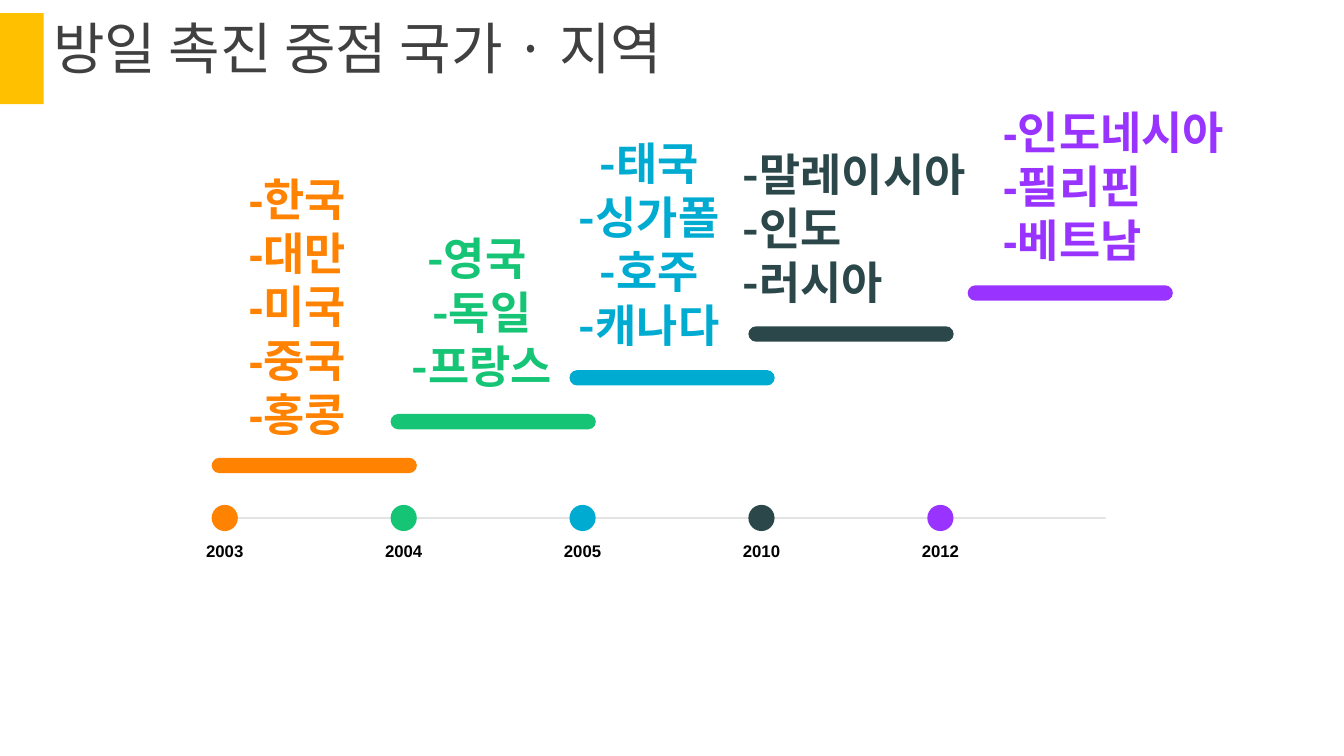
from pptx import Presentation
from pptx.dml.color import RGBColor
from pptx.enum.shapes import MSO_CONNECTOR, MSO_SHAPE
from pptx.enum.text import MSO_ANCHOR as ANCHOR, PP_ALIGN as ALIGN
from pptx.oxml.ns import qn
from pptx.util import Pt
from lxml.etree import SubElement

ORANGE = RGBColor(0xFF, 0x82, 0x01)
GREEN = RGBColor(0x16, 0xC4, 0x75)
BLUE = RGBColor(0x00, 0xAB, 0xD1)
SLATE = RGBColor(0x2B, 0x47, 0x4A)
PURPLE = RGBColor(0x99, 0x33, 0xFF)
AMBER = RGBColor(0xFF, 0xC0, 0x00)
GRAY = RGBColor(0x40, 0x40, 0x40)
BLACK = RGBColor(0, 0, 0)

KOREAN = "Noto Sans CJK KR"
LATIN = "Arial"

DOT_LEFT, DOT_STEP, DOT_SIZE = 151.2, 127.8, 18.7
AXIS_Y, AXIS_END = 370, 789.8
BAR_W, BAR_H = 146.6, 11
YEAR_W, YEAR_H = 51, 14.4
LINE_PITCH = 38.4

# year, colour, bar (left, top), list box (left, top, width, height),
# font, alignment, countries
STAGES = [
    ("2003", ORANGE, (151.2, 327), (155.5, 121.7, 113.8, 193.7), LATIN, ALIGN.CENTER,
     ["-한국", "-대만", "-미국", "-중국", "-홍콩"]),
    ("2004", GREEN, (279, 295.7), (287.3, 164.2, 113.8, 116.6), KOREAN, ALIGN.CENTER,
     ["-영국 ", "-독일", "-프랑스"]),
    ("2005", BLUE, (406.8, 264.4), (406.8, 96.5, 113.8, 154.8), KOREAN, ALIGN.CENTER,
     ["-태국", "-싱가폴", "-호주", "-캐나다"]),
    ("2010", SLATE, (534.6, 233.1), (530.6, 104.4, 175.7, 116.6), KOREAN, ALIGN.LEFT,
     ["-말레이시아", "-인도", "-러시아"]),
    ("2012", PURPLE, (691.2, 203.8), (716.4, 74.2, 189.4, 116.6), LATIN, ALIGN.LEFT,
     ["-인도네시아", "-필리핀", "-베트남"]),
]


def add_block(s, kind, left, top, width, height, color):
    sp = s.shapes.add_shape(kind, Pt(left), Pt(top), Pt(width), Pt(height))
    sp.shadow.inherit = False
    sp.fill.solid()
    sp.fill.fore_color.rgb = color
    sp.line.fill.background()
    return sp


def add_text(s, lines, left, top, width, height, *, size, color, font=LATIN, bold=False,
             align=ALIGN.LEFT, anchor=ANCHOR.MIDDLE, inset=(0, 0), pitch=None):
    """Add one paragraph per line; inset is (horizontal, vertical), pitch the line height."""
    tf = s.shapes.add_textbox(Pt(left), Pt(top), Pt(width), Pt(height)).text_frame
    tf.word_wrap = True
    tf.vertical_anchor = anchor
    tf.margin_left = tf.margin_right = Pt(inset[0])
    tf.margin_top = tf.margin_bottom = Pt(inset[1])
    for i, line in enumerate(lines):
        p = tf.add_paragraph() if i else tf.paragraphs[0]
        p.alignment = align
        if pitch:
            p.line_spacing = Pt(pitch)
        r = p.add_run()
        r.text = line
        r.font.name = font
        r.font.size = Pt(size)
        r.font.bold = bold
        r.font.color.rgb = color
        SubElement(r.font._element, qn("a:ea"), typeface=KOREAN)


def add_axis(s):
    line = s.shapes.add_connector(MSO_CONNECTOR.STRAIGHT, Pt(DOT_LEFT + DOT_SIZE), Pt(AXIS_Y),
                                  Pt(AXIS_END), Pt(AXIS_Y))
    line.line.width = Pt(1)
    line.line.color.rgb = BLACK
    sp_pr = line._element.spPr
    SubElement(sp_pr.find(".//" + qn("a:srgbClr")), qn("a:alpha"), val="16000")
    SubElement(sp_pr, qn("a:effectLst"))


def add_stage(s, index, year, color, bar, box, font, align, countries):
    left = DOT_LEFT + index * DOT_STEP
    add_block(s, MSO_SHAPE.OVAL, left, AXIS_Y - DOT_SIZE / 2, DOT_SIZE, DOT_SIZE, color)
    add_text(s, [year], left + (DOT_SIZE - YEAR_W) / 2, 386, YEAR_W, YEAR_H,
             size=12, color=BLACK, bold=True, align=ALIGN.CENTER)
    sp = add_block(s, MSO_SHAPE.ROUNDED_RECTANGLE, *bar, BAR_W, BAR_H, color)
    sp.adjustments[0] = 0.5
    add_text(s, countries, *box, size=32, color=color, font=font, bold=True,
             align=align, pitch=LINE_PITCH)


def main():
    prs = Presentation()
    prs.slide_width, prs.slide_height = Pt(960), Pt(540)
    s = prs.slides.add_slide(prs.slide_layouts[6])
    add_axis(s)
    for i, stage in enumerate(STAGES):
        add_stage(s, i, *stage)
    add_block(s, MSO_SHAPE.RECTANGLE, 0, 9.4, 31.2, 65, AMBER)
    add_text(s, ["방일 촉진 중점 국가 · 지역"], 31.2, 10, 515.5, 64, size=40, color=GRAY,
             font=KOREAN, anchor=ANCHOR.TOP, inset=(7.2, 3.6), pitch=44)
    prs.save("out.pptx")


if __name__ == "__main__":
    main()
